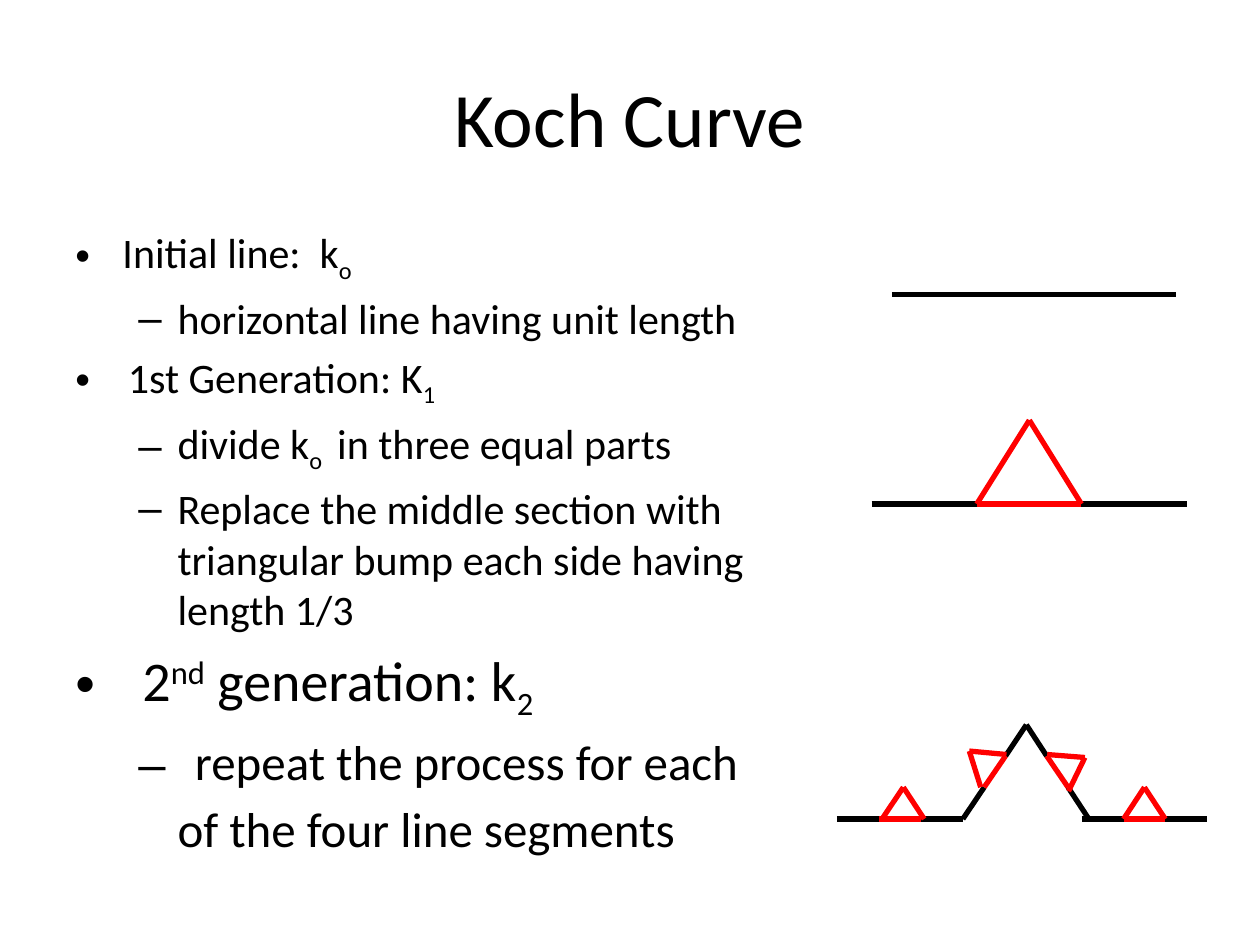
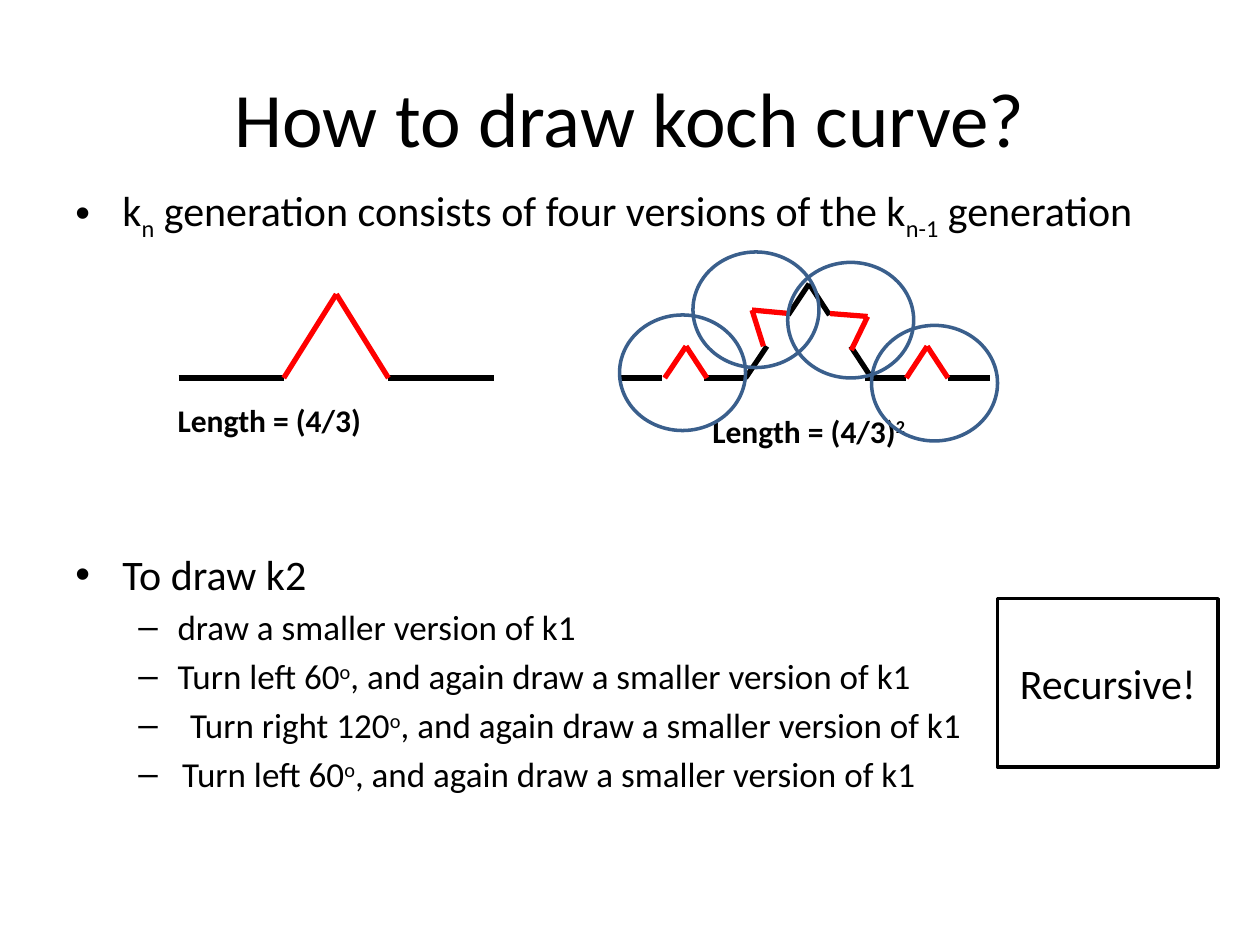
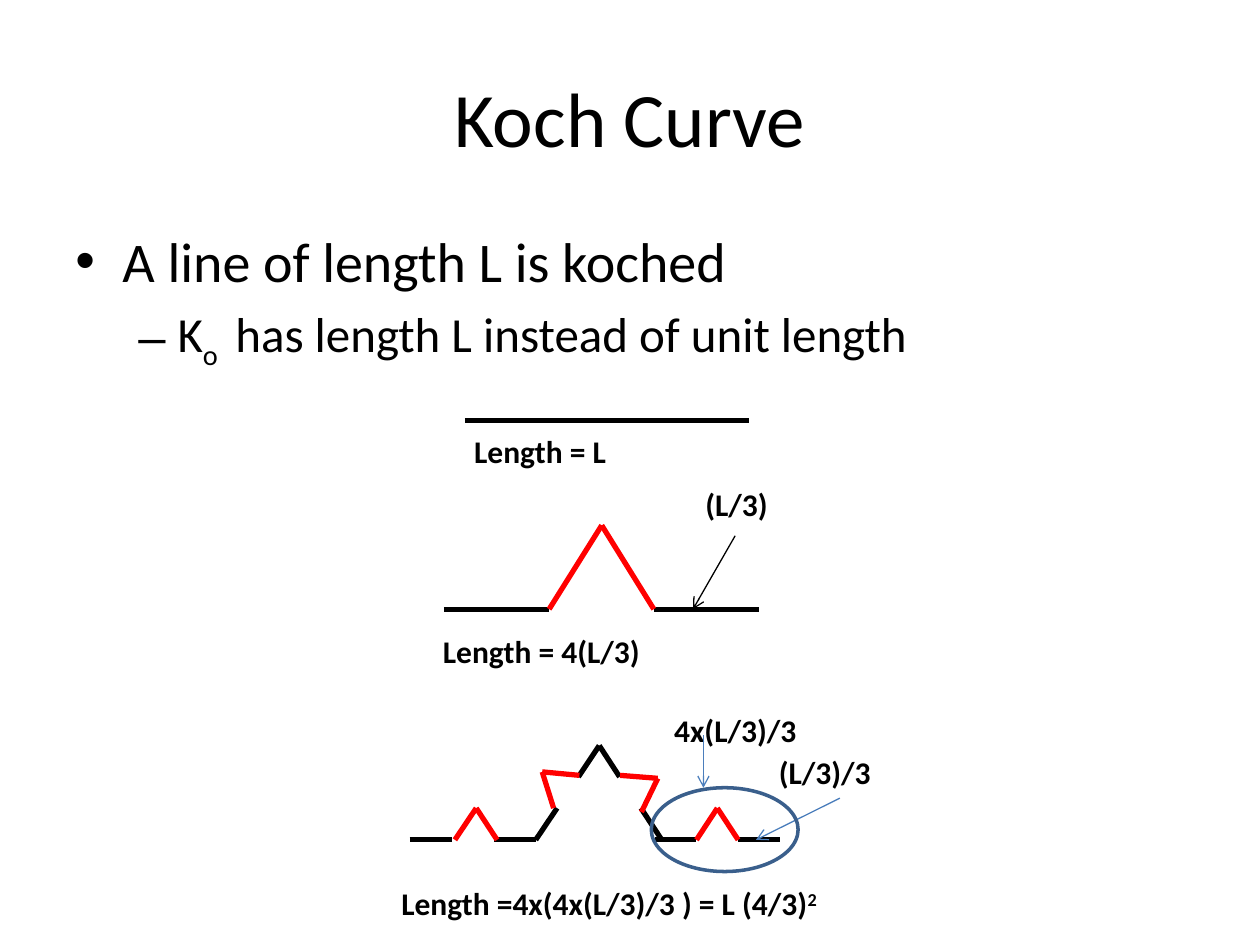
import itertools

import pptx
import pptx.dml.color
import pptx.enum.shapes
import pptx.enum.text
import pptx.oxml.ns
import pptx.util
from lxml import etree

Cm, Pt = pptx.util.Cm, pptx.util.Pt
colour = pptx.dml.color.RGBColor.from_string
qn = pptx.oxml.ns.qn
ALIGN = pptx.enum.text.PP_ALIGN
ANCHOR = pptx.enum.text.MSO_ANCHOR
SHAPE = pptx.enum.shapes.MSO_SHAPE

FONT = "Calibri"
BLACK, RED, BLUE, RING = "000000", "FF0000", "4B7EBC", "3A5F8C"
BASELINES = {"_": "-25000", "^": "30000"}
# Per outline level: bullet, left margin, hanging indent
LEVELS = (("•", 0.95, 0.95), ("–", 2.06, 0.79))

# Curve generations in cm from the left end of the base line, heights upwards
K0 = [(BLACK, [(0, 0), (5.72, 0)])]
K1 = [
    (BLACK, [(0, 0), (2.12, 0)]),
    (BLACK, [(4.23, 0), (6.35, 0)]),
    (RED, [(2.12, 0), (3.18, 1.69), (4.23, 0)]),
]
K1_BASE = [(RED, [(2.12, 0), (4.23, 0)])]
K2 = [
    (BLACK, [(0, 0), (0.85, 0)]),
    (BLACK, [(1.7, 0), (2.54, 0), (2.97, 0.64)]),
    (BLACK, [(3.4, 1.27), (3.82, 1.9), (4.23, 1.27)]),
    (BLACK, [(4.66, 0.64), (5.08, 0)]),
    (BLACK, [(4.94, 0), (5.78, 0)]),
    (BLACK, [(6.62, 0), (7.47, 0)]),
    (RED, [(0.91, 0), (1.34, 0.64), (1.76, 0)]),
    (RED, [(2.9, 0.64), (2.67, 1.37), (3.42, 1.3)]),
    (RED, [(4.24, 1.3), (5, 1.24), (4.67, 0.56)]),
    (RED, [(5.78, 0), (6.2, 0.64), (6.62, 0)]),
]
K2_BASES = [
    (RED, [(0.85, 0), (1.7, 0)]),
    (RED, [(2.97, 0.64), (3.4, 1.27)]),
    (RED, [(4.66, 0.64), (4.23, 1.27)]),
    (RED, [(5.78, 0), (6.62, 0)]),
]

# Body lines: level, size, space before, text; "|_" starts a subscript,
# "|^" a superscript and "|" normal text again
SLIDES = [
    {
        "title": "Koch Curve",
        "body_top": 4.45,
        "body": [
            (0, 24, 4.8, "Initial line:  k|_o"),
            (1, 24, 4.8, "horizontal line having unit length"),
            (0, 24, 4.8, "|_ |1st Generation: K|_1"),
            (1, 24, 4.8, "divide k|_o | in three equal parts"),
            (1, 24, 4.8, "Replace the middle section with \n"
                         "triangular bump each side having \nlength 1/3"),
            (0, 32, 6.4, "|_ | 2|^nd| generation: k|_2"),
            (1, 28, 5.6, "|_ | repeat the process for each\n"
                         "of the four line segments"),
        ],
        "curves": [
            (17.98, 5.93, K0),
            (17.57, 10.16, K1 + K1_BASE),
            (16.87, 16.51, K2 + K2_BASES),
        ],
    },
    {
        "title": "How to draw koch curve?",
        "body_top": 3.6,
        "body": [
            (0, 24, 4.8, "k|_n| generation consists of four versions of the k"
                         "|_n-1| generation"),
            (0, 24, 175, "To draw k2"),
            (1, 20, 4, "draw a smaller version of k1"),
            (1, 20, 4, "Turn left 60|^o|, and again draw a smaller version of k1"),
            (1, 20, 4, "|^ | Turn right 120|^o|, and again draw a smaller version of k1"),
            (1, 20, 4, "|^ |Turn left 60|^o|, and again draw a smaller version of k1"),
        ],
        "curves": [(3.6, 7.62, K1), (12.49, 7.62, K2)],
        "labels": [
            (3.33, 8.05, 6.35, 0.84, ALIGN.LEFT, "Length = (4/3)"),
            (13.13, 8.26, 6.35, 0.84, ALIGN.CENTER, "Length = (4/3)|^2"),
        ],
        "rings": [
            (12.49, 6.35, 2.54, 2.33),
            (13.97, 5.08, 2.54, 2.33),
            (15.88, 5.29, 2.54, 2.33),
            (17.57, 6.56, 2.54, 2.33),
        ],
        "callout": (20.11, 12.07, 4.45, 3.39, "Recursive!"),
    },
    {
        "title": "Koch Curve",
        "body_top": 4.45,
        "body": [
            (0, 32, 6.4, "A line of length L is koched"),
            (1, 28, 5.6, "K|_o | has length L instead of unit length"),
        ],
        "curves": [(9.37, 8.47, K0), (8.95, 12.28, K1), (8.26, 16.93, K2)],
        "labels": [
            (9.31, 8.68, 6.35, 0.84, ALIGN.LEFT, "Length = L"),
            (8.68, 12.7, 6.35, 0.84, ALIGN.LEFT, "Length = 4(L/3)"),
            (7.2, 17.36, 10.16, 1.69, ALIGN.CENTER,
             "Length =4x(4x(L/3)/3 ) = L (4/3)|^2"),
            (15.45, 15.03, 2.96, 1.06, ALIGN.LEFT, "(L/3)/3"),
            (13.97, 9.74, 1.91, 0.84, ALIGN.LEFT, "(L/3)"),
            (13.34, 14.18, 3.81, 1.06, ALIGN.LEFT, "4x(L/3)/3"),
        ],
        "arrows": [
            (14.82, 10.8, 13.97, 12.28, BLACK),
            (16.93, 16.09, 15.24, 16.93, BLUE),
            (14.18, 14.82, 14.18, 15.88, BLUE),
        ],
        "rings": [(13.13, 15.88, 2.96, 1.69)],
    },
]


def write(paragraph, marked_text, size, bold=False):
    for piece in marked_text.split("|"):
        baseline = BASELINES.get(piece[:1])
        rows = (piece[1:] if baseline else piece).split("\n")
        for number, row in enumerate(rows):
            if number:
                paragraph.add_line_break()
            if not row:
                continue
            run = paragraph.add_run()
            run.text = row
            run.font.name, run.font.size, run.font.bold = FONT, Pt(size), bold
            run.font.color.rgb = colour(BLACK)
            if baseline:
                run.font._element.set("baseline", baseline)


def draw_line(slide, x1, y1, x2, y2, hue, weight):
    line = slide.shapes.add_connector(
        pptx.enum.shapes.MSO_CONNECTOR.STRAIGHT, Cm(x1), Cm(y1), Cm(x2), Cm(y2))
    line.line.color.rgb = colour(hue)
    line.line.width = Pt(weight)
    etree.SubElement(line._element.spPr, qn("a:effectLst"))
    return line


deck = pptx.Presentation()
deck.slide_width, deck.slide_height = Cm(25.4), Cm(19.05)

for content in SLIDES:
    slide = deck.slides.add_slide(deck.slide_layouts[6])

    # Title
    title = slide.shapes.add_textbox(Cm(1.27), Cm(0.76), Cm(22.86), Cm(3.18)).text_frame
    title.word_wrap = True
    title.vertical_anchor = ANCHOR.MIDDLE
    title.paragraphs[0].alignment = ALIGN.CENTER
    write(title.paragraphs[0], content["title"], 44)

    # Bulleted outline
    top = content["body_top"]
    outline = slide.shapes.add_textbox(Cm(1.27), Cm(top), Cm(22.86), Cm(17.02 - top)).text_frame
    outline.word_wrap = True
    for number, (level, size, before, text) in enumerate(content["body"]):
        point = outline.add_paragraph() if number else outline.paragraphs[0]
        point.level = level
        point.space_before = Pt(before)
        bullet, margin, hanging = LEVELS[level]
        properties = point._p.get_or_add_pPr()
        properties.set("marL", str(Cm(margin)))
        properties.set("indent", str(-Cm(hanging)))
        etree.SubElement(properties, qn("a:buFont"), typeface="Arial")
        etree.SubElement(properties, qn("a:buChar"), char=bullet)
        write(point, text, size)

    # Curves
    for left, base, strokes in content["curves"]:
        for hue, points in strokes:
            for (x1, up1), (x2, up2) in itertools.pairwise(points):
                draw_line(slide, left + x1, base - up1, left + x2, base - up2, hue, 3)

    # Length labels
    for left, top, width, height, align, text in content.get("labels", []):
        label = slide.shapes.add_textbox(Cm(left), Cm(top), Cm(width), Cm(height)).text_frame
        label.word_wrap = True
        label.vertical_anchor = ANCHOR.MIDDLE
        label.paragraphs[0].alignment = align
        write(label.paragraphs[0], text, 18, bold=True)

    # Arrows from labels to segments
    for x1, y1, x2, y2, hue in content.get("arrows", []):
        arrow = draw_line(slide, x1, y1, x2, y2, hue, 0.75)
        etree.SubElement(arrow.line._get_or_add_ln(), qn("a:tailEnd"), type="arrow")

    # Rings around the smaller copies
    for left, top, width, height in content.get("rings", []):
        ring = slide.shapes.add_shape(SHAPE.OVAL, Cm(left), Cm(top), Cm(width), Cm(height))
        ring.shadow.inherit = False
        ring.fill.background()
        ring.line.color.rgb = colour(RING)
        ring.line.width = Pt(2)

    # Boxed remark
    if "callout" in content:
        left, top, width, height, text = content["callout"]
        remark = slide.shapes.add_shape(SHAPE.RECTANGLE, Cm(left), Cm(top), Cm(width), Cm(height))
        remark.shadow.inherit = False
        remark.fill.background()
        remark.line.color.rgb = colour(BLACK)
        remark.line.width = Pt(2)
        remark.text_frame.vertical_anchor = ANCHOR.MIDDLE
        remark.text_frame.paragraphs[0].alignment = ALIGN.CENTER
        write(remark.text_frame.paragraphs[0], text, 24)

deck.save("out.pptx")
